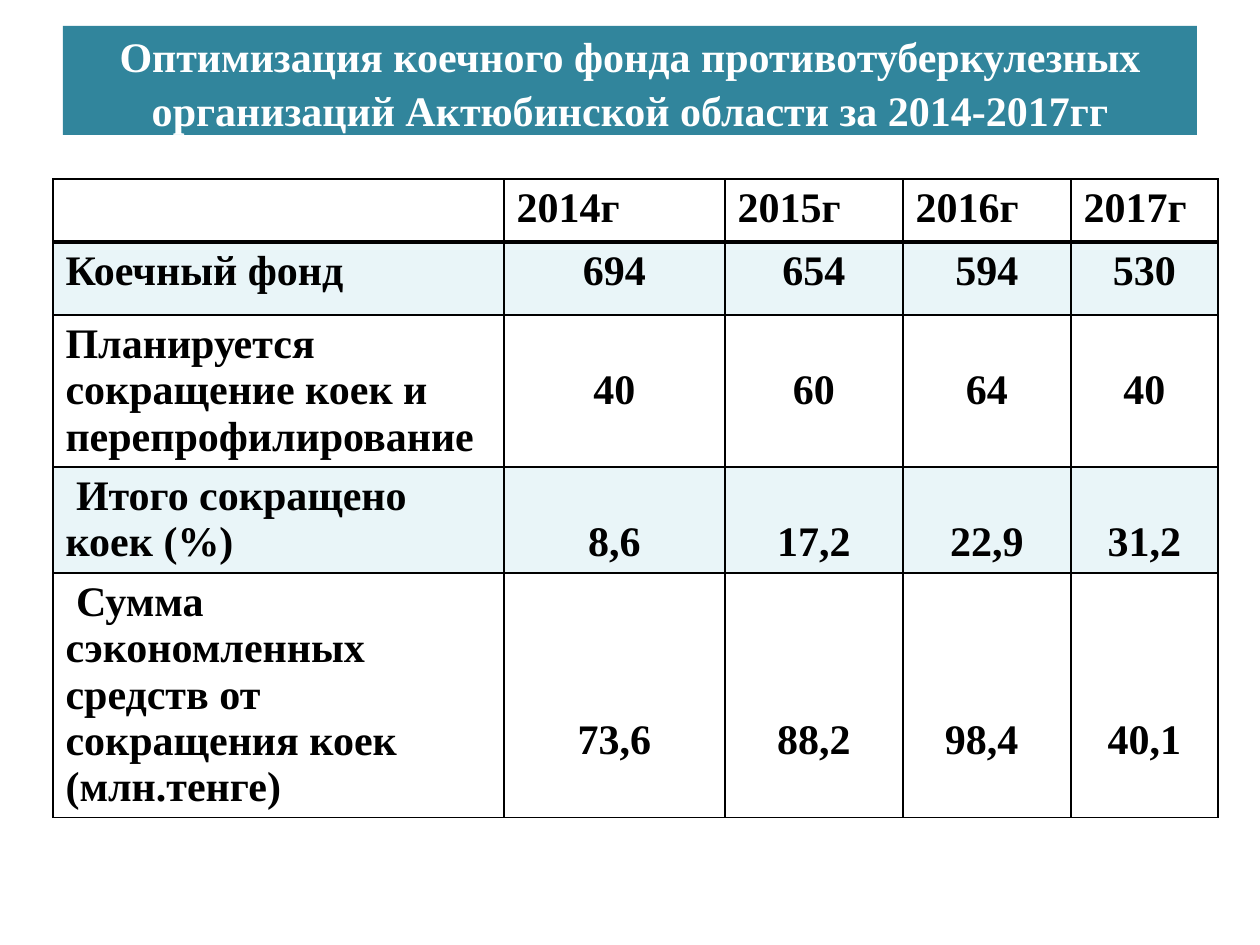
from lxml import etree
from pptx import Presentation
from pptx import util as u
from pptx.dml.color import RGBColor
from pptx.enum import shapes, text
from pptx.oxml.ns import qn

SCALE = 914400 / 126
LINE = 46
PAD = 6


def px(n):
    return u.Emu(round(n * SCALE))


def rgb(value):
    return RGBColor.from_string(value)


class Deck:
    font = "Times New Roman"
    size = 24
    ink = "000000"
    accent = "31859C"
    band = "93CDDD"

    def __init__(self, width, height):
        self.prs = Presentation()
        self.prs.slide_width, self.prs.slide_height = px(width), px(height)
        self.s = self.prs.slides.add_slide(self.prs.slide_layouts[6])

    def label(self, tf, content, color, align):
        p = tf.paragraphs[0]
        p.text = content
        p.alignment = align
        f = p.font
        f.name, f.size, f.bold = self.font, u.Pt(self.size), True
        f.color.rgb = rgb(color)
        return p

    def title(self, x, y, w, h, content):
        sp = self.s.shapes.add_shape(shapes.MSO_SHAPE.RECTANGLE, px(x), px(y), px(w), px(h))
        sp.shadow.inherit = False
        sp.fill.solid()
        sp.fill.fore_color.rgb = rgb(self.accent)
        sp.line.fill.background()
        tf = sp.text_frame
        tf.word_wrap = True
        tf.vertical_anchor = text.MSO_ANCHOR.MIDDLE
        p = self.label(tf, content, "FFFFFF", text.PP_ALIGN.CENTER)
        p.line_spacing = 1.08

    def borders(self, cell, widths):
        tcPr = cell._tc.get_or_add_tcPr()
        for i, (side, width) in enumerate(zip("LRTB", widths)):
            ln = etree.Element(qn(f"a:ln{side}"), w=str(u.Pt(width)))
            fill = etree.SubElement(ln, qn("a:solidFill"))
            etree.SubElement(fill, qn("a:srgbClr"), val=self.ink)
            tcPr.insert(i, ln)

    def shade(self, cell, banded):
        if not banded:
            cell.fill.background()
            return
        cell.fill.solid()
        cell.fill.fore_color.rgb = rgb(self.band)
        clr = cell._tc.tcPr.find(f".//{qn('a:srgbClr')}")
        etree.SubElement(clr, qn("a:alpha"), val="20000")

    def table(self, x, y, cols, rows, data, drops):
        frame = self.s.shapes.add_table(len(rows), len(cols), px(x), px(y), px(sum(cols)), px(sum(rows)))
        tbl = frame.table
        tbl.first_row = tbl.horz_banding = False
        for col, w in zip(tbl.columns, cols):
            col.width = px(w)
        for row, h in zip(tbl.rows, rows):
            row.height = px(h)
        for r, values in enumerate(data):
            for c, value in enumerate(values):
                cell = tbl.cell(r, c)
                number = r > 0 and c > 0
                align = text.PP_ALIGN.CENTER if number else text.PP_ALIGN.LEFT
                self.label(cell.text_frame, value, self.ink, align)
                cell.margin_top = px(PAD + (drops[r] * LINE if number else 0))
                self.shade(cell, r % 2 == 1)
                self.borders(cell, (1, 1, 2 if r == 1 else 1, 2 if r == 0 else 1))

    def save(self):
        self.prs.save("out.pptx")


def main():
    deck = Deck(1260, 945)
    deck.title(63, 26, 1134, 109,
               "Оптимизация коечного фонда противотуберкулезных организаций Актюбинской области за 2014-2017гг")
    data = [
        ["", "2014г", "2015г", "2016г", "2017г"],
        ["Коечный фонд", "694", "654", "594", "530"],
        ["Планируется сокращение коек и перепрофилирование", "40", "60", "64", "40"],
        [" Итого сокращено коек (%)", "8,6", "17,2", "22,9", "31,2"],
        [" Сумма сэкономленных средств от сокращения коек (млн.тенге)", "73,6", "88,2", "98,4 ", "40,1"],
    ]
    deck.table(53, 179, [451, 221, 178, 168, 147], [63, 73, 152, 106, 244], data, [0, 0, 1, 1, 3])
    deck.save()


if __name__ == "__main__":
    main()
